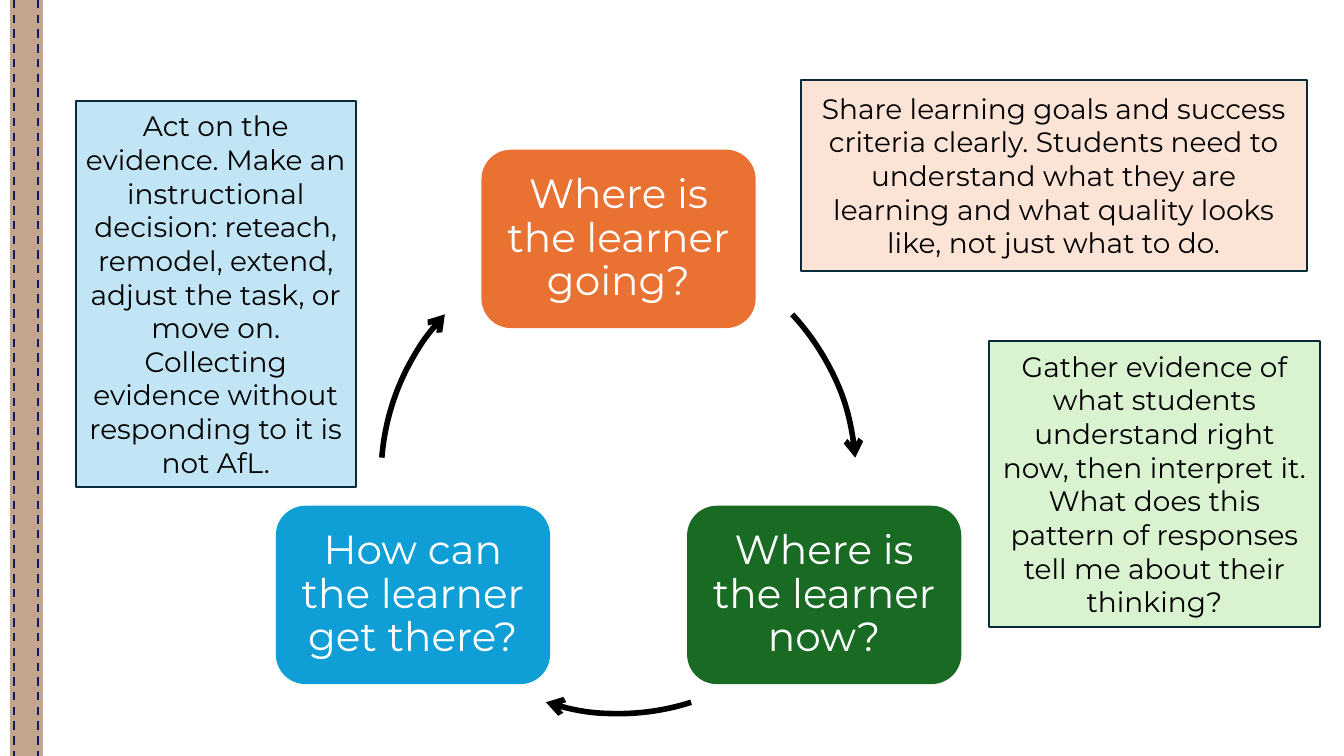
import math

import pptx
import pptx.dml.color
import pptx.enum.dml
import pptx.enum.shapes
import pptx.enum.text
import pptx.oxml.ns
import pptx.util
from lxml import etree

RGB = pptx.dml.color.RGBColor
SHAPE = pptx.enum.shapes.MSO_SHAPE
Inches = pptx.util.Inches
Pt = pptx.util.Pt

BLACK = RGB(0x00, 0x00, 0x00)
WHITE = RGB(0xFF, 0xFF, 0xFF)
TAN = RGB(0xC3, 0xA4, 0x8C)
NAVY = RGB(0x15, 0x19, 0x5D)
OUTLINE = RGB(0x09, 0x2A, 0x39)
ORANGE = RGB(0xE9, 0x71, 0x32)
GREEN = RGB(0x19, 0x6B, 0x24)
BLUE = RGB(0x0F, 0x9E, 0xD5)
PEACH = RGB(0xFB, 0xE3, 0xD6)
MINT = RGB(0xD9, 0xF2, 0xD0)
SKY = RGB(0xC1, 0xE5, 0xF5)

FONT = "Montserrat"
WIDTH, HEIGHT = 13.33, 7.5
NODE_W, NODE_H = 2.72, 1.77

STEPS = [
    (-90, "Where is the learner going?", ORANGE),
    (30, "Where is the learner now?", GREEN),
    (150, "How can the learner get there?", BLUE),
]
ARCS = [(317, 355.5), (72.2, 107.8), (184.5, 223)]
NOTES = [
    ((7.94, 0.79, 5.02, 1.9), PEACH,
     "Share learning goals and success criteria clearly. Students need to "
     "understand what they are learning and what quality looks like, not "
     "just what to do."),
    ((9.81, 3.38, 3.28, 2.84), MINT,
     "Gather evidence of what students understand right now, then interpret "
     "it. What does this pattern of responses tell me about their thinking?"),
    ((0.75, 1, 2.78, 3.83), SKY,
     "Act on the evidence. Make an instructional decision: reteach, remodel, "
     "extend, adjust the task, or move on. Collecting evidence without "
     "responding to it is not AfL."),
]


def add_panel(s, kind, box, fill=None, line=None, width=1.5):
    """Add a shape without shadow, with the given fill and outline."""
    sp = s.shapes.add_shape(kind, *map(Inches, box))
    sp.shadow.inherit = False
    if fill is None:
        sp.fill.background()
    else:
        sp.fill.solid()
        sp.fill.fore_color.rgb = fill
    if line is None:
        sp.line.fill.background()
    else:
        sp.line.color.rgb = line
        sp.line.width = Pt(width)
    return sp


def write_text(sp, text, size, color, spacing=1.0, insets=(0.1, 0.05)):
    """Write one centred paragraph into a shape."""
    tf = sp.text_frame
    across, down = map(Inches, insets)
    frame = {
        "word_wrap": True,
        "vertical_anchor": pptx.enum.text.MSO_ANCHOR.MIDDLE,
        "margin_left": across, "margin_right": across,
        "margin_top": down, "margin_bottom": down,
    }
    for name, value in frame.items():
        setattr(tf, name, value)
    p = tf.paragraphs[0]
    p.alignment = pptx.enum.text.PP_ALIGN.CENTER
    p.line_spacing = spacing
    r = p.add_run()
    r.text = text
    for name, value in {"name": FONT, "size": Pt(size)}.items():
        setattr(r.font, name, value)
    r.font.color.rgb = color


def add_ribbon(s, box):
    """Draw the side band with a dashed stitch near each edge."""
    left, top, width, height = box
    add_panel(s, SHAPE.RECTANGLE, box, TAN, TAN, 0.75)
    for x in (left + 0.04, left + width - 0.04):
        stitch = s.shapes.add_connector(
            pptx.enum.shapes.MSO_CONNECTOR.STRAIGHT,
            *map(Inches, (x, top, x, top + height)))
        stitch.line.color.rgb = NAVY
        stitch.line.width = Pt(1.5)
        stitch.line.dash_style = pptx.enum.dml.MSO_LINE.DASH
        etree.SubElement(stitch._element.spPr,
                         pptx.oxml.ns.qn("a:effectLst"))


def add_cycle(s, box):
    """Place the questions around a circle, joined by curved arrows."""
    left, top, size, _ = box
    radius = size / 2
    for angle, text, fill in STEPS:
        x = left + radius * (1 + math.cos(math.radians(angle)))
        y = top + radius * (1 + math.sin(math.radians(angle)))
        node = add_panel(s, SHAPE.ROUNDED_RECTANGLE,
                         (x - NODE_W / 2, y - NODE_H / 2, NODE_W, NODE_H),
                         fill)
        write_text(node, text, 29, WHITE, 0.9, (0.12, 0.12))
    for start, end in ARCS:
        arc = add_panel(s, SHAPE.ARC, box, None, BLACK, 4)
        arc.adjustments[0] = start * 0.6
        arc.adjustments[1] = end * 0.6
        etree.SubElement(arc.line._get_or_add_ln(),
                         pptx.oxml.ns.qn("a:tailEnd"), type="arrow")


def add_note(s, box, fill, text):
    """Add an outlined explanation box."""
    note = add_panel(s, SHAPE.RECTANGLE, box, fill, OUTLINE)
    write_text(note, text, 20, BLACK)


def main():
    """Build and save the slide."""
    prs = pptx.Presentation()
    prs.slide_width = Inches(WIDTH)
    prs.slide_height = Inches(HEIGHT)
    s = prs.slides.add_slide(prs.slide_layouts[6])
    add_ribbon(s, (0.1, 0, 0.32, HEIGHT))
    add_cycle(s, (3.78, 2.37, 4.71, 4.71))
    for box, fill, text in NOTES:
        add_note(s, box, fill, text)
    prs.save("out.pptx")


if __name__ == "__main__":
    main()
